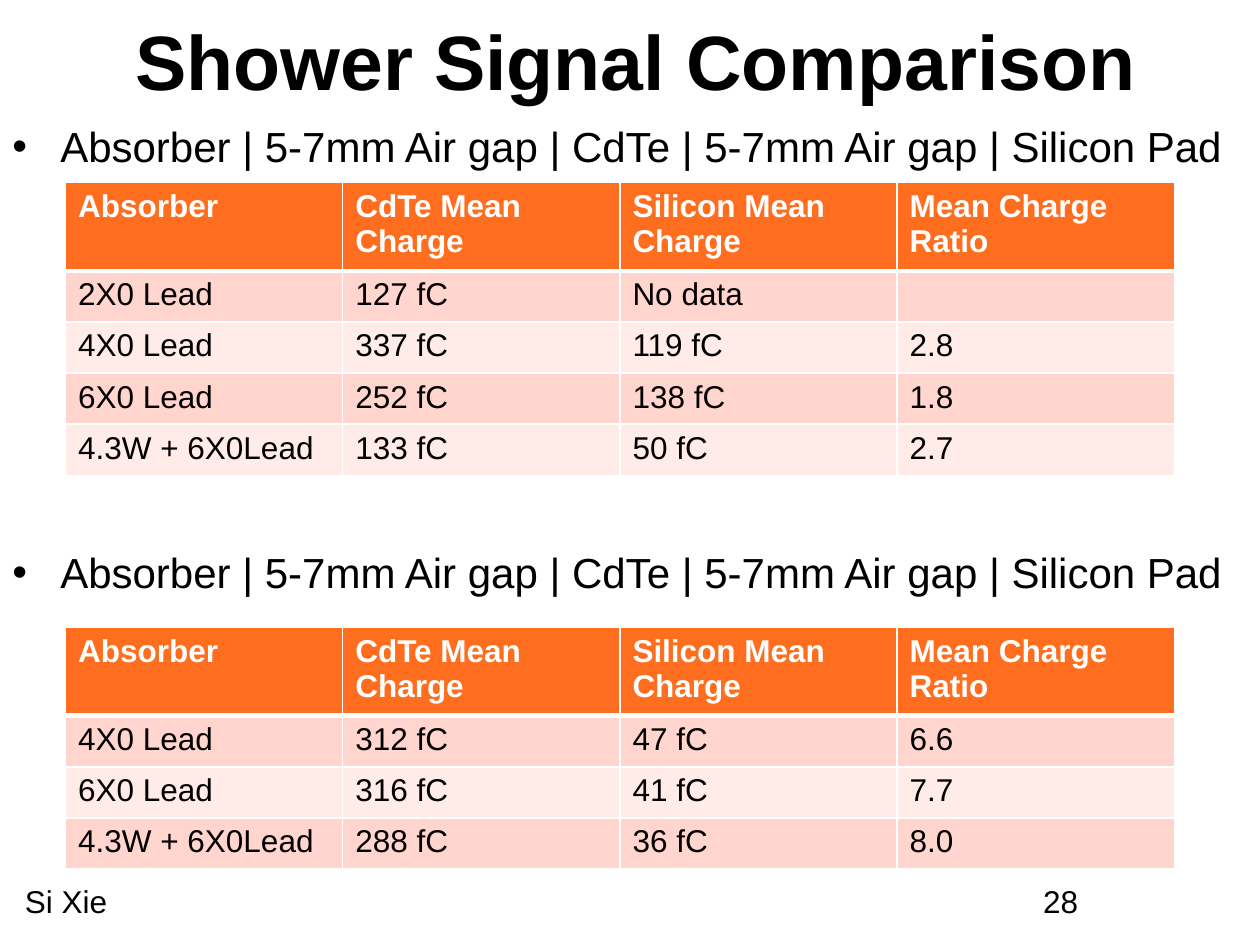
from dataclasses import dataclass

from lxml.etree import SubElement
from pptx import Presentation
from pptx.dml.color import RGBColor
from pptx.enum.text import MSO_ANCHOR as Anchor, PP_ALIGN as Align
from pptx.oxml.ns import qn
from pptx.util import Inches, Pt

COLORS = {"text": "000000", "line": "FFFFFF", "header": "FF6E1E",
          "odd": "FFD5CD", "even": "FFEBE8"}
FONT = "Arial"
WIDTH, HEIGHT = Inches(10), Inches(7.5)
COLUMN_WIDTH = Inches(2.2)
HEADER_HEIGHT, ROW_HEIGHT = Inches(0.65), Pt(29.2)
BULLET_INDENT = Inches(0.38)
HEADINGS = ("Absorber", "CdTe Mean Charge", "Silicon Mean Charge",
            "Mean Charge Ratio")
SETUP = "Absorber | 5-7mm Air gap | CdTe | 5-7mm Air gap | Silicon Pad"


@dataclass
class Label:
    text: str
    left: float
    top: float
    width: float
    height: float
    size: int = 18
    bold: bool = False
    bullet: bool = False
    align: Align = Align.LEFT
    anchor: Anchor = Anchor.TOP
    margin_top: float = 0.05


@dataclass
class Measurement:
    """A setup line and the table of its results."""
    setup_top: float
    table_top: float
    rows: tuple


LABELS = (
    Label("Shower Signal Comparison", 0.1, 0.01, 9.9, 1.25, size=44,
          bold=True, align=Align.CENTER, margin_top=0.1),
    Label("Si Xie", 0.1, 6.95, 3.17, 0.4),
    Label("28", 8.18, 6.95, 1.15, 0.4),
)
MEASUREMENTS = (
    Measurement(0.91, 1.45, (
        ("2X0 Lead", "127 fC", "No data", ""),
        ("4X0 Lead", "337 fC", "119 fC", "2.8"),
        ("6X0 Lead", "252 fC", "138 fC", "1.8"),
        ("4.3W + 6X0Lead", "133 fC", "50 fC", "2.7"))),
    Measurement(4.29, 4.98, (
        ("4X0 Lead", "312 fC", "47 fC", "6.6"),
        ("6X0 Lead", "316 fC", "41 fC", "7.7"),
        ("4.3W + 6X0Lead", "288 fC", "36 fC", "8.0"))),
)


def rgb(name: str) -> RGBColor:
    return RGBColor.from_string(COLORS[name])


def format_font(font, size: int, color: str, bold: bool) -> None:
    for key, value in {"name": FONT, "size": Pt(size), "bold": bold}.items():
        setattr(font, key, value)
    font.color.rgb = rgb(color)


def add_bullet(paragraph) -> None:
    properties = paragraph._p.get_or_add_pPr()
    properties.set("marL", str(BULLET_INDENT))
    properties.set("indent", str(-BULLET_INDENT))
    SubElement(properties, qn("a:buFont"), typeface=FONT)
    SubElement(properties, qn("a:buChar"), char="•")


def add_label(slide, label: Label) -> None:
    box = slide.shapes.add_textbox(*map(Inches, (
        label.left, label.top, label.width, label.height)))
    frame = box.text_frame
    frame.word_wrap = True
    frame.vertical_anchor = label.anchor
    frame.margin_top = Inches(label.margin_top)
    paragraph = frame.paragraphs[0]
    paragraph.alignment = label.align
    if label.bullet:
        add_bullet(paragraph)
    run = paragraph.add_run()
    run.text = label.text
    format_font(run.font, label.size, "text", label.bold)


def set_borders(cell, widths: dict) -> None:
    """Draw the sides; must come before the cell's fill."""
    properties = cell._tc.get_or_add_tcPr()
    for side, width in widths.items():
        line = SubElement(properties, qn(f"a:{side}"), w=str(Pt(width)))
        fill = SubElement(line, qn("a:solidFill"))
        SubElement(fill, qn("a:srgbClr"), val=COLORS["line"])


def format_cell(cell, text: str, row: int) -> None:
    header = row == 0
    set_borders(cell, {"lnL": 1, "lnR": 1, "lnT": 3 if row == 1 else 1,
                       "lnB": 3 if header else 1})
    cell.fill.solid()
    cell.fill.fore_color.rgb = rgb(
        "header" if header else "odd" if row % 2 else "even")
    cell.text = text
    format_font(cell.text_frame.paragraphs[0].font, 18,
                "line" if header else "text", header)


def add_results(slide, top: float, rows: tuple) -> None:
    lines = (HEADINGS, *rows)
    table = slide.shapes.add_table(
        len(lines), len(HEADINGS), Inches(0.52), Inches(top),
        COLUMN_WIDTH * len(HEADINGS),
        HEADER_HEIGHT + ROW_HEIGHT * len(rows)).table
    for column in table.columns:
        column.width = COLUMN_WIDTH
    for row, texts in enumerate(lines):
        table.rows[row].height = ROW_HEIGHT if row else HEADER_HEIGHT
        for column, text in enumerate(texts):
            format_cell(table.cell(row, column), text, row)


def main() -> None:
    presentation = Presentation()
    presentation.slide_width, presentation.slide_height = WIDTH, HEIGHT
    slide = presentation.slides.add_slide(presentation.slide_layouts[6])
    for label in LABELS:
        add_label(slide, label)
    for measurement in MEASUREMENTS:
        add_results(slide, measurement.table_top, measurement.rows)
        add_label(slide, Label(SETUP, 0, measurement.setup_top, 9.92, 0.5,
                               size=24, bullet=True, anchor=Anchor.MIDDLE))
    presentation.save("out.pptx")


if __name__ == "__main__":
    main()
